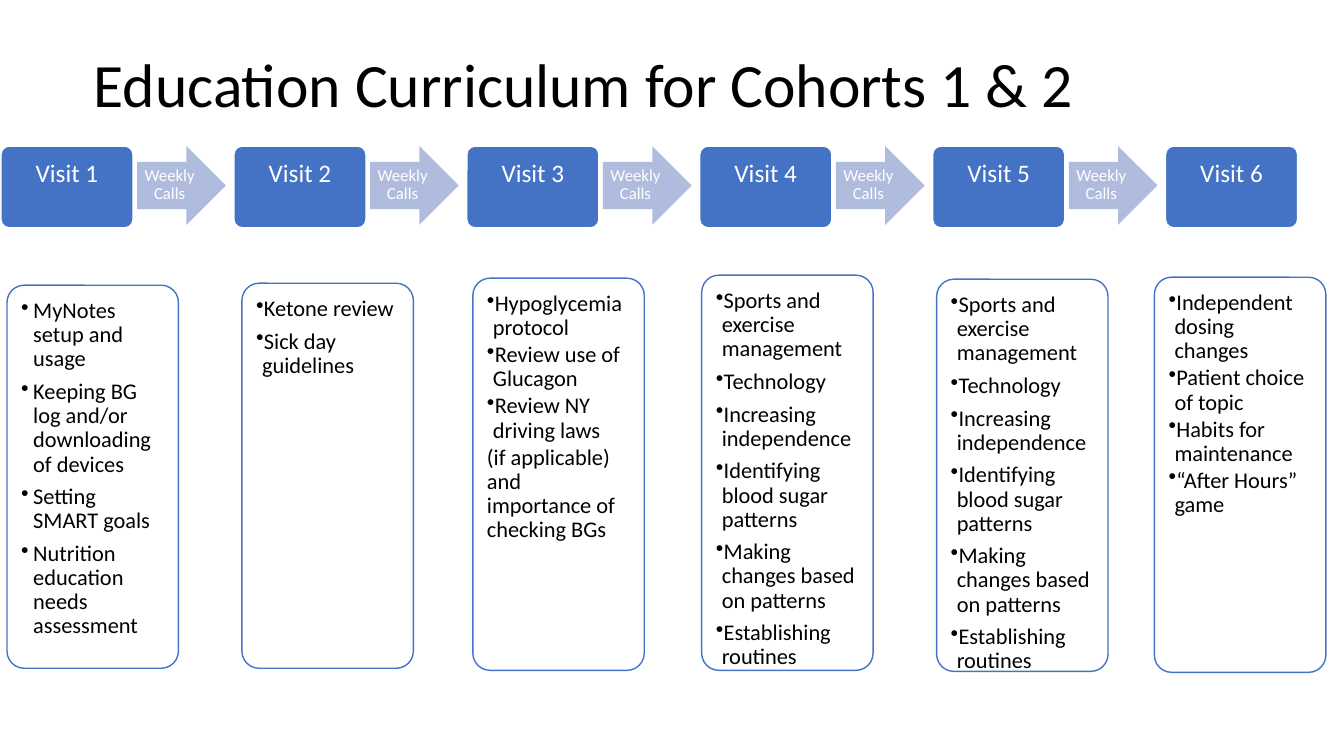
from lxml import etree
from pptx import Presentation
from pptx import util as u
from pptx.dml.color import RGBColor
from pptx.enum import shapes, text
from pptx.oxml.ns import qn

PX = 9144
BLUE, PALE, WHITE, BLACK = "4472C4", "B0BCDE", "FFFFFF", "000000"
PITCH = 231
TOPICS = ["Sports and exercise management", "Technology",
          "Increasing independence", "Identifying blood sugar patterns",
          "Making changes based on patterns", "Establishing routines"]
CARDS = [
    ((7, 283, 170, 380), 12, 6,
     ["MyNotes setup and usage",
      "Keeping BG log and/or downloading of devices",
      "Setting SMART goals", "Nutrition education needs assessment"]),
    ((240, 281, 170, 382), 6, 6, ["Ketone review", "Sick day guidelines"]),
    ((469, 276, 170, 389), 6, 2,
     ["Hypoglycemia protocol", "Review use of Glucagon",
      "Review NY driving laws",
      "(if applicable) and importance of checking BGs"]),
    ((696, 273, 170, 392), 6, 6, TOPICS),
    ((929, 277, 170, 389), 6, 6, TOPICS),
    ((1145, 275, 170, 392), 6, 2,
     ["Independent dosing changes", "Patient choice of topic",
      "Habits for maintenance", "“After Hours” game"]),
]


def px(n):
    """Turn px into EMU."""
    return u.Emu(n * PX)


def tint(code):
    """Turn a hex string into a colour."""
    return RGBColor.from_string(code)


def apply(item, values):
    """Set each attribute named in values."""
    for name, value in values.items():
        setattr(item, name, value)


def write(shape, lines, size, hue, pads, anchor, align, after=0):
    """Fill a shape with paragraphs in one format and return them."""
    frame = shape.text_frame
    sides = ("margin_left", "margin_top", "margin_right", "margin_bottom")
    apply(frame, dict(zip(sides, map(px, pads)), word_wrap=True,
                      vertical_anchor=anchor))
    frame.text = "\n".join(lines)
    for para in frame.paragraphs:
        apply(para, {"alignment": align, "line_spacing": 0.9,
                     "space_after": u.Pt(after)})
        apply(para.runs[0].font, {"size": u.Pt(size), "name": "Calibri"})
        para.runs[0].font.color.rgb = tint(hue)
    return frame.paragraphs


def block(slide, kind, box, fill, line, ratios):
    """Draw a preset shape with plain fill and line."""
    shape = slide.shapes.add_shape(kind, *map(px, box))
    shape.shadow.inherit = False
    shape.fill.solid()
    shape.fill.fore_color.rgb = tint(fill)
    if line:
        shape.line.color.rgb = tint(line)
        shape.line.width = u.Pt(1)
    else:
        shape.line.fill.background()
    for i, ratio in enumerate(ratios):
        shape.adjustments[i] = ratio
    return shape


def bullet(para, hang):
    """Give a paragraph a bullet with a hanging indent."""
    props = para._p.get_or_add_pPr()
    props.set("marL", str(px(hang)))
    props.set("indent", str(px(-hang)))
    etree.SubElement(props, qn("a:buChar")).set("char", "•")


def title(slide, box, words):
    """Write the heading of the slide."""
    write(slide.shapes.add_textbox(*map(px, box)), [words], 44, BLACK,
          (10, 5, 10, 5), text.MSO_ANCHOR.MIDDLE, text.PP_ALIGN.LEFT)


def visit(slide, box, words):
    """Draw the header of one visit."""
    shape = block(slide, shapes.MSO_SHAPE.ROUNDED_RECTANGLE, box,
                  BLUE, WHITE, [0.1])
    write(shape, [words], 18, WHITE, (12, 12, 12, 33),
          text.MSO_ANCHOR.TOP, text.PP_ALIGN.CENTER)


def card(slide, box, hang, after, lines):
    """Draw the list of topics of one visit."""
    shape = block(slide, shapes.MSO_SHAPE.ROUNDED_RECTANGLE, box,
                  WHITE, BLUE, [0.1])
    color = shape.fill._xPr.find(qn("a:solidFill"))[0]
    etree.SubElement(color, qn("a:alpha")).set("val", "90000")
    paras = write(shape, lines, 16, BLACK, (9, 9, 9, 9),
                  text.MSO_ANCHOR.TOP, text.PP_ALIGN.LEFT, after)
    for para in paras:
        if not para.text.startswith("("):
            bullet(para, hang)


def arrow(slide, box):
    """Draw the arrow that leads to the next visit."""
    shape = block(slide, shapes.MSO_SHAPE.RIGHT_ARROW, box,
                  PALE, None, [0.6, 0.5])
    write(shape, ["Weekly Calls"], 12, WHITE, (0, 0, 0, 0),
          text.MSO_ANCHOR.MIDDLE, text.PP_ALIGN.CENTER)


def main():
    """Build and save the slide."""
    deck = Presentation()
    apply(deck, {"slide_width": px(1333), "slide_height": px(750)})
    slide = deck.slides.add_slide(deck.slide_layouts[6])
    title(slide, (83, 14, 1150, 145),
          "Education Curriculum for Cohorts 1 & 2")
    for i, parts in enumerate(CARDS):
        left = 1 + i * PITCH
        visit(slide, (left, 145, 131, 81), f"Visit {i + 1}")
        card(slide, *parts)
        if i < len(CARDS) - 1:
            arrow(slide, (left + 135, 145, 88, 78))
    deck.save("out.pptx")


if __name__ == "__main__":
    main()
